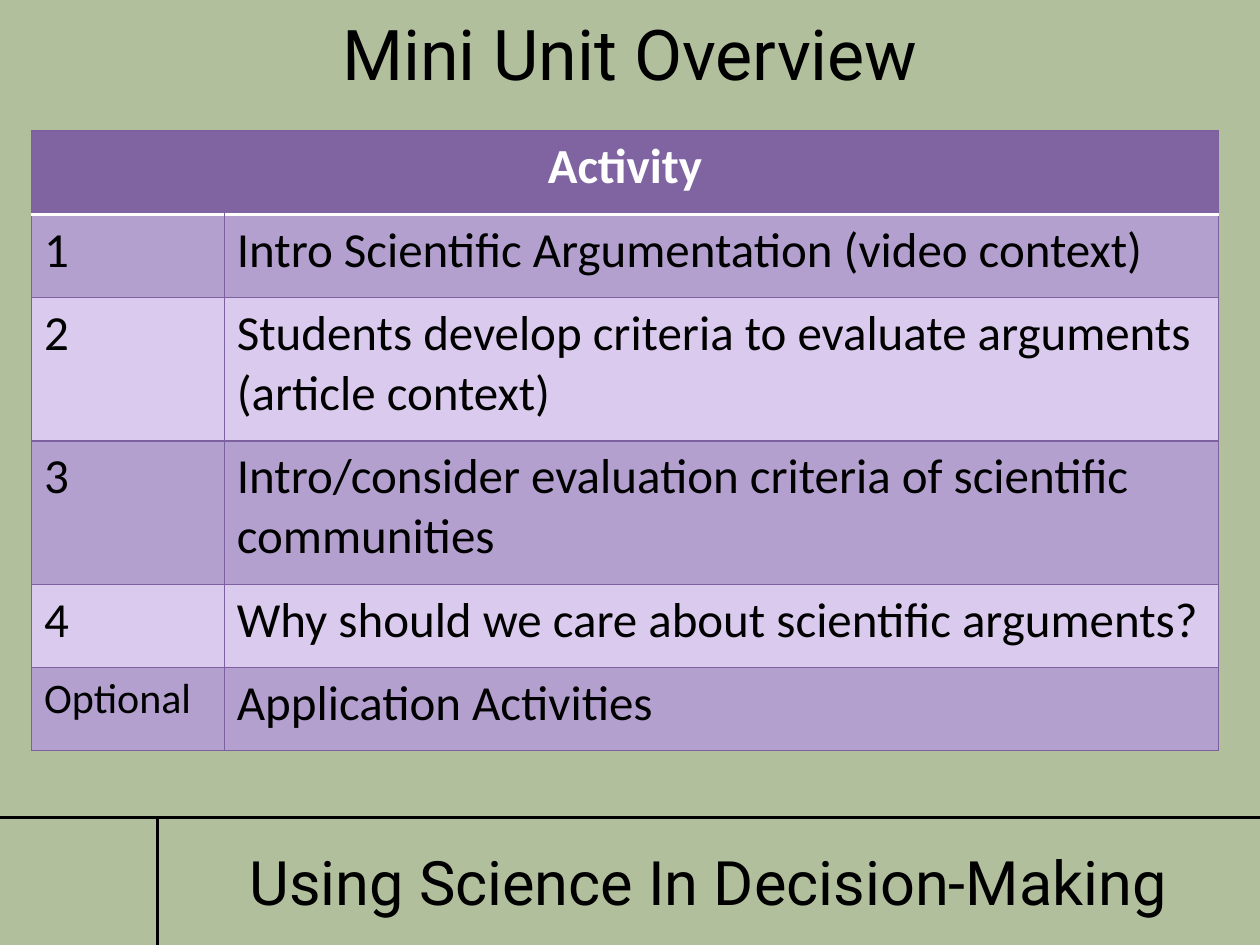
from lxml.etree import SubElement
from pptx import Presentation
from pptx.dml.color import RGBColor
from pptx.enum.shapes import MSO_CONNECTOR
from pptx.enum.text import MSO_ANCHOR, PP_ALIGN
from pptx.oxml import parse_xml
from pptx.oxml.ns import nsdecls, qn
from pptx.util import Inches, Pt

SAGE = RGBColor(0xB2, 0xBF, 0x9D)
BLACK = RGBColor(0, 0, 0)
WHITE = RGBColor(0xFF, 0xFF, 0xFF)
PURPLE = RGBColor(0x80, 0x64, 0xA2)
BORDER = RGBColor(0x7D, 0x60, 0xA0)
DARK_BAND = RGBColor(0xB3, 0xA0, 0xCF)
LIGHT_BAND = RGBColor(0xDA, 0xCA, 0xED)

prs = Presentation()
prs.slide_width, prs.slide_height = Inches(10), Inches(7.5)
slide = prs.slides.add_slide(prs.slide_layouts[6])
slide.background.fill.solid()
slide.background.fill.fore_color.rgb = SAGE


def add_heading(text, left, top, width, height, size):
    box = slide.shapes.add_textbox(Inches(left), Inches(top), Inches(width), Inches(height))
    frame = box.text_frame
    frame.word_wrap = True
    frame.vertical_anchor = MSO_ANCHOR.MIDDLE
    frame.paragraphs[0].alignment = PP_ALIGN.CENTER
    run = frame.paragraphs[0].add_run()
    run.text = text
    run.font.name = "Roboto"
    run.font.size = Pt(size)
    run.font.color.rgb = BLACK
    return run


def set_border(cell, side, color, width):
    line = parse_xml(
        f'<a:ln{side} {nsdecls("a")} w="{Pt(width)}"><a:solidFill>'
        f'<a:srgbClr val="{color}"/></a:solidFill></a:ln{side}>'
    )
    cell._tc.get_or_add_tcPr().append(line)


# Footer
add_heading("Using Science In Decision-Making", 1.25, 6.52, 8.75, 0.95, 35)
for x1, y1, x2, y2 in [(0, 6.49, 10, 6.49), (1.25, 7.5, 1.25, 6.49)]:
    rule = slide.shapes.add_connector(
        MSO_CONNECTOR.STRAIGHT, Inches(x1), Inches(y1), Inches(x2), Inches(y2)
    )
    rule.line.color.rgb = BLACK
    rule.line.width = Pt(2)
    SubElement(rule._element.spPr, qn("a:effectLst"))

# Title with a soft text shadow
title = add_heading("Mini Unit Overview", 0.25, 0, 9.5, 0.83, 40)
title.font._element.find(qn("a:solidFill")).addnext(parse_xml(
    f'<a:effectLst {nsdecls("a")}><a:outerShdw blurRad="38100" dist="38100" dir="2700000">'
    '<a:srgbClr val="000000"><a:alpha val="43000"/></a:srgbClr></a:outerShdw></a:effectLst>'
))

# Activity table
activities = [
    ("Activity", ""),
    ("1", "Intro Scientific Argumentation (video context)"),
    ("2", "Students develop criteria to evaluate arguments (article context)"),
    ("3", "Intro/consider evaluation criteria of scientific communities"),
    ("4", "Why should we care about scientific arguments?"),
    ("Optional", "Application Activities"),
]
row_heights = [0.66, 0.66, 1.14, 1.14, 0.66, 0.66]
column_widths = [1.53, 7.89]

table = slide.shapes.add_table(
    len(activities), 2, Inches(0.25), Inches(1.04),
    Inches(sum(column_widths)), Inches(sum(row_heights))
).table
table.first_row = table.horz_banding = False
for column, width in zip(table.columns, column_widths):
    column.width = Inches(width)
for row, height in zip(table.rows, row_heights):
    row.height = Inches(height)
table.cell(0, 0).merge(table.cell(0, 1))

for r, texts in enumerate(activities):
    is_header = r == 0
    for c, text in enumerate(texts):
        cell = table.cell(r, c)
        for side in "LRTB":
            if (r, side) in [(0, "B"), (1, "T")]:
                set_border(cell, side, WHITE, 2)
            else:
                set_border(cell, side, BORDER, 0.75)
        cell.fill.solid()
        cell.fill.fore_color.rgb = PURPLE if is_header else DARK_BAND if r % 2 else LIGHT_BAND
        if not text:
            continue
        paragraph = cell.text_frame.paragraphs[0]
        paragraph.alignment = PP_ALIGN.CENTER if is_header else PP_ALIGN.LEFT
        run = paragraph.add_run()
        run.text = text
        run.font.name = "Calibri"
        run.font.size = Pt(24 if text == "Optional" else 28)
        run.font.bold = is_header
        run.font.color.rgb = WHITE if is_header else BLACK

prs.save("out.pptx")
